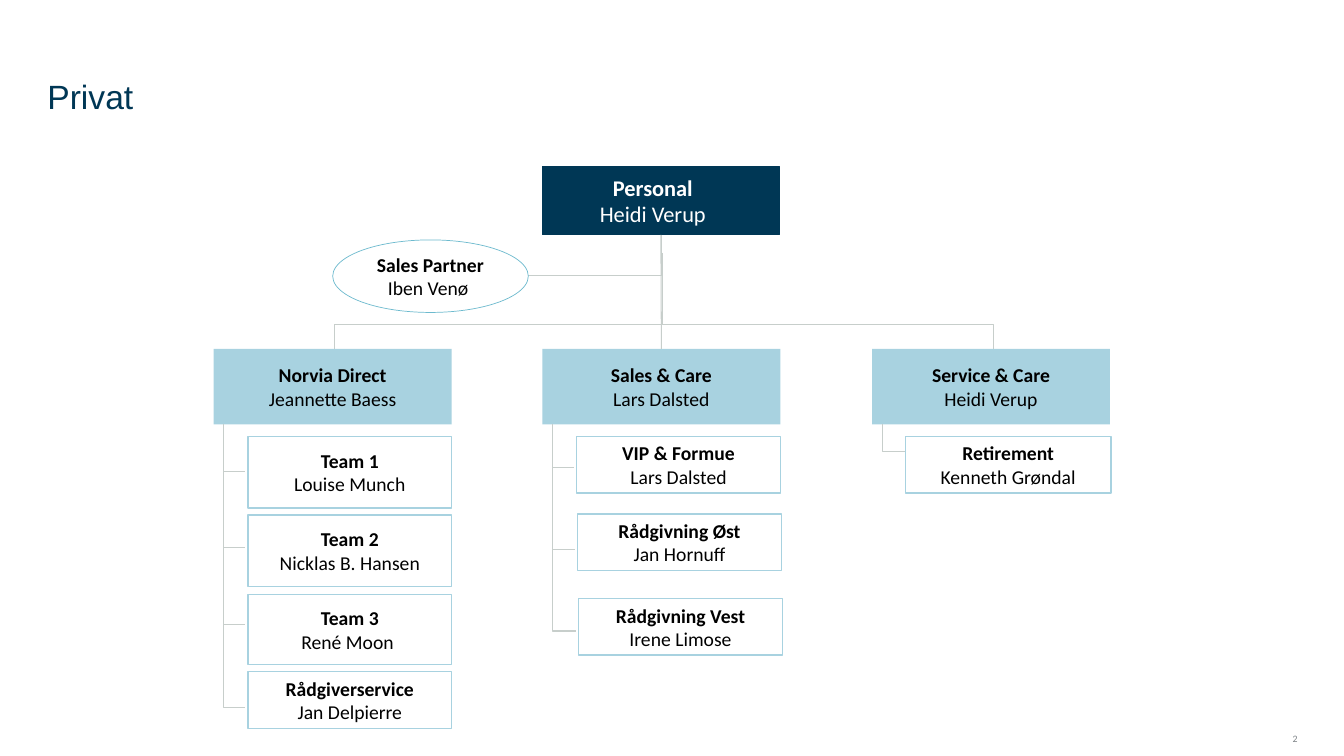
from pptx import Presentation
from pptx.dml.color import RGBColor
from pptx.enum.shapes import MSO_CONNECTOR as CONNECTOR, MSO_SHAPE as SHAPE
from pptx.enum.text import MSO_ANCHOR as ANCHOR, PP_ALIGN as ALIGN
from pptx.oxml.ns import qn
from pptx.util import Pt
from lxml import etree

NAVY = RGBColor(0x00, 0x37, 0x55)
SKY = RGBColor(0xA8, 0xD2, 0xE0)
TEAL = RGBColor(0x6D, 0xBA, 0xCE)
LINE_GRAY = RGBColor(0xC7, 0xCE, 0xCB)
NUMBER_GRAY = RGBColor(0x7B, 0x81, 0x85)
WHITE = RGBColor(0xFF, 0xFF, 0xFF)
BLACK = RGBColor(0x00, 0x00, 0x00)

EMU_PER_PX = 9144  # 100 px to the inch


def px(*lengths):
    return [length * EMU_PER_PX for length in lengths]


def write(paragraph, text, size=14, color=BLACK, font="Calibri", bold=False,
          align=ALIGN.CENTER, spacing=None, right_indent=0):
    paragraph.alignment = align
    if spacing:
        paragraph.line_spacing = spacing
    if right_indent:
        paragraph._p.get_or_add_pPr().set("marR", str(right_indent * EMU_PER_PX))
    run = paragraph.add_run()
    run.text = text
    run.font.size = Pt(size)
    run.font.name = font
    run.font.bold = bold
    run.font.color.rgb = color


class OrgChart:
    """Style and slide of the organisation chart."""

    def __init__(self, slide):
        self.slide = slide
        self.line_color = LINE_GRAY
        self.line_width = Pt(0.75)

    def prepare(self, frame, anchor, margin=0):
        frame.word_wrap = True
        frame.vertical_anchor = anchor
        frame.margin_left, frame.margin_top, frame.margin_right, frame.margin_bottom = px(*[margin] * 4)
        return frame.paragraphs[0]

    def title(self, text, left, top, width, height):
        shape = self.slide.shapes.title
        shape.left, shape.top, shape.width, shape.height = px(left, top, width, height)
        write(self.prepare(shape.text_frame, ANCHOR.TOP), text, size=24,
              color=NAVY, font="Arial", align=ALIGN.LEFT, spacing=0.9)

    def page_number(self, text, left, top, width, height):
        shape = self.slide.shapes.add_textbox(*px(left, top, width, height))
        write(self.prepare(shape.text_frame, ANCHOR.BOTTOM), text, size=7,
              color=NUMBER_GRAY, align=ALIGN.RIGHT)

    def box(self, role, person, left, top, width, height, kind=SHAPE.RECTANGLE,
            fill=WHITE, line=SKY, line_width=1, margin=0, role_indent=0, **text_format):
        shape = self.slide.shapes.add_shape(kind, *px(left, top, width, height))
        shape.shadow.inherit = False
        shape.fill.solid()
        shape.fill.fore_color.rgb = fill
        if line is None:
            shape.line.fill.background()
        else:
            shape.line.color.rgb = line
            shape.line.width = Pt(line_width)
        first = self.prepare(shape.text_frame, ANCHOR.MIDDLE, margin)
        write(first, role, bold=True, right_indent=role_indent, **text_format)
        write(shape.text_frame.add_paragraph(), person, **text_format)
        return shape

    def connector(self, kind, *ends):
        connector = self.slide.shapes.add_connector(kind, *ends)
        connector.line.color.rgb = self.line_color
        connector.line.width = self.line_width
        etree.SubElement(connector._element.spPr, qn("a:effectLst"))
        return connector

    def elbow(self, x1, y1, x2, y2, preset="bentConnector2"):
        """Leave (x1, y1) downwards and bend to (x2, y2)."""
        rightwards = x2 > x1
        center_x, center_y = (x1 + x2) / 2, (y1 + y2) / 2
        half_width, half_height = (y2 - y1) / 2, abs(x2 - x1) / 2
        flip = -1 if rightwards else 1
        ends = px(center_x - flip * half_width, center_y - half_height,
                  center_x + flip * half_width, center_y + half_height)
        connector = self.connector(CONNECTOR.ELBOW, *[int(end) for end in ends])
        properties = connector._element.spPr
        properties.find(qn("a:xfrm")).set("rot", str((270 if rightwards else 90) * 60000))
        properties.find(qn("a:prstGeom")).set("prst", preset)

    def straight(self, upper, lower):
        connector = self.connector(CONNECTOR.STRAIGHT, 0, 0, 0, 0)
        connector.begin_connect(upper, 2)
        connector.end_connect(lower, 0)


# Units: role, head, left edge, teams (role, head, left, top, width, height, line end)
UNITS = [
    ("Norvia Direct", "Jeannette Baess", 212, [
        ("Team 1", "Louise Munch", 246, 433, 202, 71, 468),
        ("Team 2", "Nicklas B. Hansen", 246, 511, 202, 71, 543),
        ("Team 3", "René Moon ", 246, 590, 202, 69, 620),
        ("Rådgiverservice", "Jan Delpierre", 246, 666, 202, 57, 702)]),
    ("Sales & Care", "Lars Dalsted", 538, [
        ("VIP & Formue", "Lars Dalsted", 572, 433, 202, 56, 464),
        ("Rådgivning Øst", "Jan Hornuff", 573, 510, 202, 56, 545),
        ("Rådgivning Vest", "Irene Limose", 574, 594, 202, 56, 626)]),
    ("Service & Care", "Heidi Verup", 865, [
        ("Retirement", "Kenneth Grøndal", 898, 433, 204, 56, 475)]),
]
UNIT_TOP, UNIT_WIDTH, UNIT_HEIGHT = 346, 236, 75
UNIT_BOTTOM = UNIT_TOP + UNIT_HEIGHT


def main():
    presentation = Presentation()
    presentation.slide_width, presentation.slide_height = px(1333, 750)
    chart = OrgChart(presentation.slides.add_slide(presentation.slide_layouts[5]))
    chart.title("Privat", 47, 80, 1240, 75)
    chart.page_number("2", 1244, 727, 43, 12)

    # Lines from the top to the outer units and the partner
    for unit_center in (332, 985):
        chart.elbow(657, 251, unit_center, 393, "bentConnector3")
    chart.elbow(656, 223, 524, 273)

    # Top of the chart
    chart.box("Sales Partner", "Iben Venø ", 330, 238, 194, 72,
              kind=SHAPE.OVAL, line=TEAL, line_width=0.5, margin=8)
    personal = chart.box("Personal", "Heidi Verup", 538, 165, 235, 68, fill=NAVY,
                         line=NAVY, line_width=0.75, role_indent=16, size=16, color=WHITE)

    # Units with their teams
    for role, head, left, teams in UNITS:
        unit = chart.box(role, head, left, UNIT_TOP, UNIT_WIDTH, UNIT_HEIGHT,
                         fill=SKY, line=None)
        if role == "Sales & Care":
            chart.straight(personal, unit)
        for *team, line_end in teams:
            team_left = team[2]
            if len(teams) == 1:
                chart.elbow(left + 10, UNIT_BOTTOM, team_left, line_end, "bentConnector3")
            else:
                chart.elbow(left + 10, UNIT_BOTTOM, team_left - 3, line_end)
            chart.box(*team)

    presentation.save("out.pptx")


if __name__ == "__main__":
    main()
